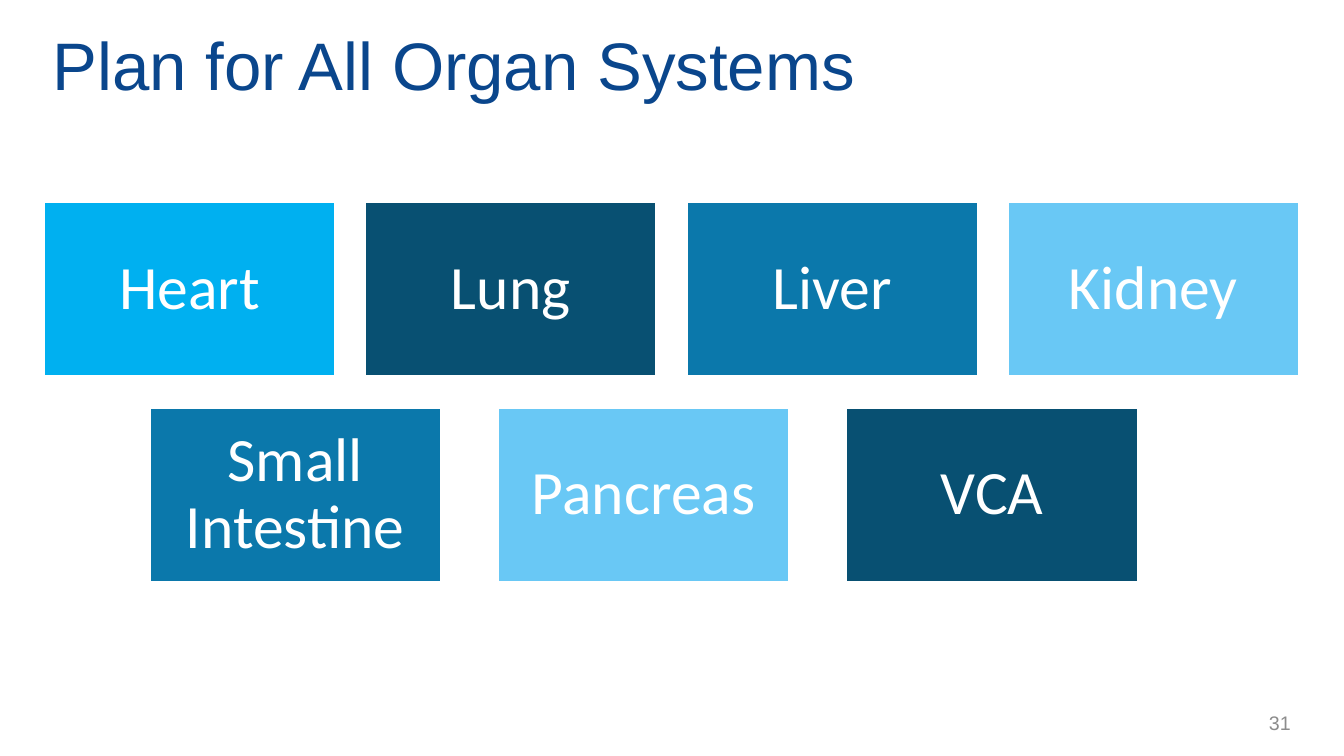
from pptx import Presentation
from pptx.dml.color import RGBColor
from pptx.enum.shapes import MSO_SHAPE
from pptx.enum.text import MSO_ANCHOR, PP_ALIGN
from pptx.util import Inches, Pt

TITLE = "Plan for All Organ Systems"
PAGE_NUMBER = "31"
COLORS = {
    "title": "0A468C", "number": "8C8C8C", "white": "FFFFFF",
    "bright": "00B0F0", "dark": "085072", "mid": "0B78AB", "light": "69C8F5",
}
# Each row: left edge, top edge, column pitch, tiles
ROWS = [
    (0.43, 2.0, 3.187, [("Heart", "bright"), ("Lung", "dark"),
                        ("Liver", "mid"), ("Kidney", "light")]),
    (1.48, 4.04, 3.455, [("Small Intestine", "mid"), ("Pancreas", "light"),
                         ("VCA", "dark")]),
]
TILE_WIDTH, TILE_HEIGHT = 2.9, 1.74


def color(name):
    return RGBColor.from_string(COLORS[name])


def write(box, text, *, size, font, ink, align, inset=(0.1, 0.05), spacing=1.0):
    frame = box.text_frame
    frame.word_wrap = True
    frame.vertical_anchor = MSO_ANCHOR.MIDDLE
    frame.margin_left = frame.margin_right = Inches(inset[0])
    frame.margin_top = frame.margin_bottom = Inches(inset[1])
    para = frame.paragraphs[0]
    para.alignment = align
    para.line_spacing = spacing
    span = para.add_run()
    span.text = text
    span.font.size = Pt(size)
    span.font.name = font
    span.font.color.rgb = color(ink)


def add_tile(page, label, fill, left, top):
    tile = page.shapes.add_shape(
        MSO_SHAPE.RECTANGLE, Inches(left), Inches(top),
        Inches(TILE_WIDTH), Inches(TILE_HEIGHT))
    tile.shadow.inherit = False
    tile.fill.solid()
    tile.fill.fore_color.rgb = color(fill)
    tile.line.color.rgb = color("white")
    tile.line.width = Pt(2.25)
    write(tile, label, size=44, font="Calibri", ink="white",
          align=PP_ALIGN.CENTER, inset=(0.18, 0.18), spacing=0.9)


def main():
    deck = Presentation()
    deck.slide_width, deck.slide_height = Inches(13.33), Inches(7.5)
    page = deck.slides.add_slide(deck.slide_layouts[5])

    title = page.shapes.title
    title.left, title.top = Inches(0.42), Inches(0.17)
    title.width, title.height = Inches(12.75), Inches(0.93)
    write(title, TITLE, size=48, font="Arial", ink="title", align=PP_ALIGN.LEFT)

    for left, top, pitch, tiles in ROWS:
        for column, (label, fill) in enumerate(tiles):
            add_tile(page, label, fill, left + column * pitch, top)

    number = page.shapes.add_textbox(
        Inches(10.64), Inches(6.97), Inches(2.26), Inches(0.4))
    write(number, PAGE_NUMBER, size=14, font="Arial", ink="number",
          align=PP_ALIGN.RIGHT)

    deck.save("out.pptx")


if __name__ == "__main__":
    main()
